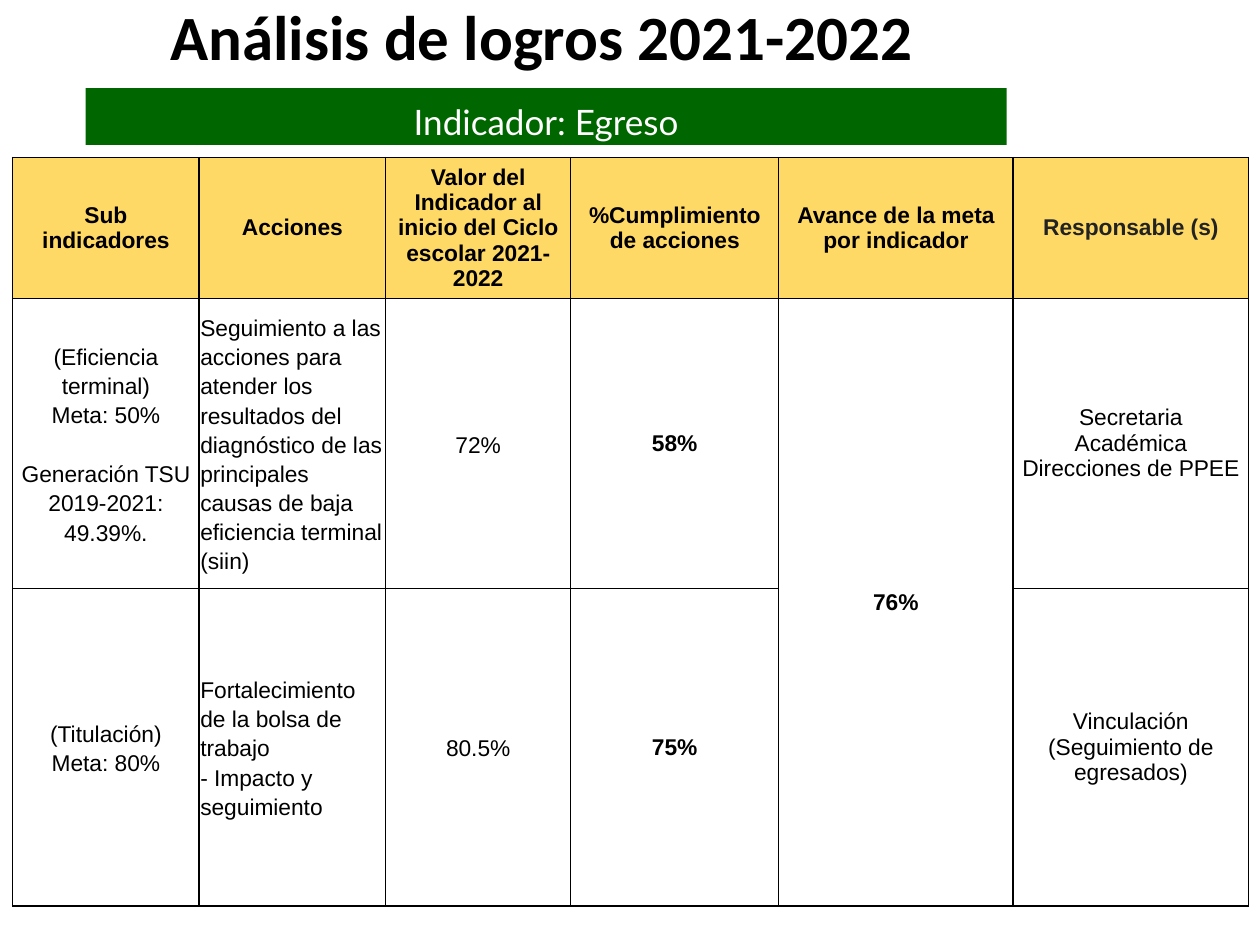
import pptx
import pptx.util
import pptx.dml.color
import pptx.enum.text
import pptx.enum.shapes
import pptx.oxml
import pptx.oxml.ns
from pptx.util import Inches

RGBColor = pptx.dml.color.RGBColor
Pt = pptx.util.Pt
ALIGN = pptx.enum.text.PP_ALIGN
MIDDLE = pptx.enum.text.MSO_ANCHOR.MIDDLE

BLACK = RGBColor(0x00, 0x00, 0x00)
WHITE = RGBColor(0xFF, 0xFF, 0xFF)
GREY = RGBColor(0x22, 0x22, 0x22)
GOLD = RGBColor(0xFF, 0xD9, 0x65)
GREEN = RGBColor(0x00, 0x66, 0x00)


def write(frame, lines, font, size, color, bold=False, space=None, align=ALIGN.CENTER):
    for i, line in enumerate(lines):
        para = frame.paragraphs[0] if i == 0 else frame.add_paragraph()
        para.alignment = align
        if space:
            para.line_spacing = space
        for j, part in enumerate(line.split("\n")):
            if j:
                para.add_line_break()
            run = para.add_run()
            run.text = part
            run.font.name = font
            run.font.size = Pt(size)
            run.font.bold = bold
            run.font.color.rgb = color


def border(cell):
    props = cell._tc.get_or_add_tcPr()
    for i, side in enumerate(("lnL", "lnR", "lnT", "lnB")):
        props.insert(i, pptx.oxml.parse_xml(
            f'<a:{side} {pptx.oxml.ns.nsdecls("a")} w="12700"><a:solidFill>'
            f'<a:srgbClr val="{BLACK}"/></a:solidFill></a:{side}>'))


deck = pptx.Presentation()
deck.slide_width = Inches(10)
deck.slide_height = Inches(7.5)
slide = deck.slides.add_slide(deck.slide_layouts[6])

# Title
title = slide.shapes.add_textbox(Inches(0.95), Inches(0), Inches(6.7), Inches(0.63))
title.fill.solid()
title.fill.fore_color.rgb = WHITE
title.text_frame.word_wrap = True
title.text_frame.vertical_anchor = MIDDLE
write(title.text_frame, ["Análisis de logros 2021-2022"], "Calibri", 36, BLACK, True, 0.9)

# Table of achievements
HEADS = ["Sub indicadores", "Acciones",
         "Valor del Indicador al inicio del Ciclo escolar 2021-2022",
         "%Cumplimiento de acciones", "Avance de la meta por indicador",
         "Responsable (s)"]
ROWS = [
    [[head] for head in HEADS],
    [["(Eficiencia terminal)", "Meta: 50%", "Generación TSU 2019-2021: 49.39%."],
     ["Seguimiento a las acciones para atender los resultados del diagnóstico "
      "de las principales causas de baja eficiencia terminal (siin)"],
     ["72%"], ["58%"], ["76%"],
     ["Secretaria Académica", "Direcciones de PPEE"]],
    [["(Titulación)", "Meta: 80%"],
     ["Fortalecimiento de la bolsa de trabajo\n- Impacto y seguimiento"],
     ["80.5%"], ["75%"], [],
     ["Vinculación (Seguimiento de egresados)"]],
]
WIDTHS = [1.48, 1.48, 1.47, 1.65, 1.86, 1.87]
HEIGHTS = [1.12, 2.3, 2.52]

table = slide.shapes.add_table(len(ROWS), len(WIDTHS), Inches(0.1), Inches(1.25),
                               Inches(sum(WIDTHS)), Inches(sum(HEIGHTS))).table
for col, width in zip(table.columns, WIDTHS):
    col.width = Inches(width)
for row, height in zip(table.rows, HEIGHTS):
    row.height = Inches(height)
table.cell(1, 4).merge(table.cell(2, 4))

for r, row in enumerate(ROWS):
    for c, lines in enumerate(row):
        cell = table.cell(r, c)
        head = r == 0
        tight = not head and c < 3
        cell.fill.solid()
        cell.fill.fore_color.rgb = GOLD if head else WHITE
        cell.vertical_anchor = MIDDLE
        cell.margin_left = cell.margin_right = Inches(0.01 if tight else 0.07)
        cell.margin_top = cell.margin_bottom = Inches(0)
        border(cell)
        write(cell.text_frame, lines, "Arial", 13,
              GREY if head and c == 5 else BLACK,
              bold=head or c in (3, 4),
              space=1.15 if tight else None,
              align=ALIGN.LEFT if tight and c == 1 else ALIGN.CENTER)

# One-line gap above the generation figure
table.cell(1, 0).text_frame.paragraphs[2].space_before = Pt(17)

# Indicator bar
bar = slide.shapes.add_shape(pptx.enum.shapes.MSO_SHAPE.RECTANGLE, Inches(0.68),
                             Inches(0.7), Inches(7.31), Inches(0.45))
bar.shadow.inherit = False
bar.fill.solid()
bar.fill.fore_color.rgb = GREEN
bar.line.fill.background()
bar.text_frame.word_wrap = True
bar.text_frame.vertical_anchor = pptx.enum.text.MSO_ANCHOR.TOP
write(bar.text_frame, ["Indicador: Egreso"], "Lato", 20, WHITE, space=1.15)

deck.save("out.pptx")
